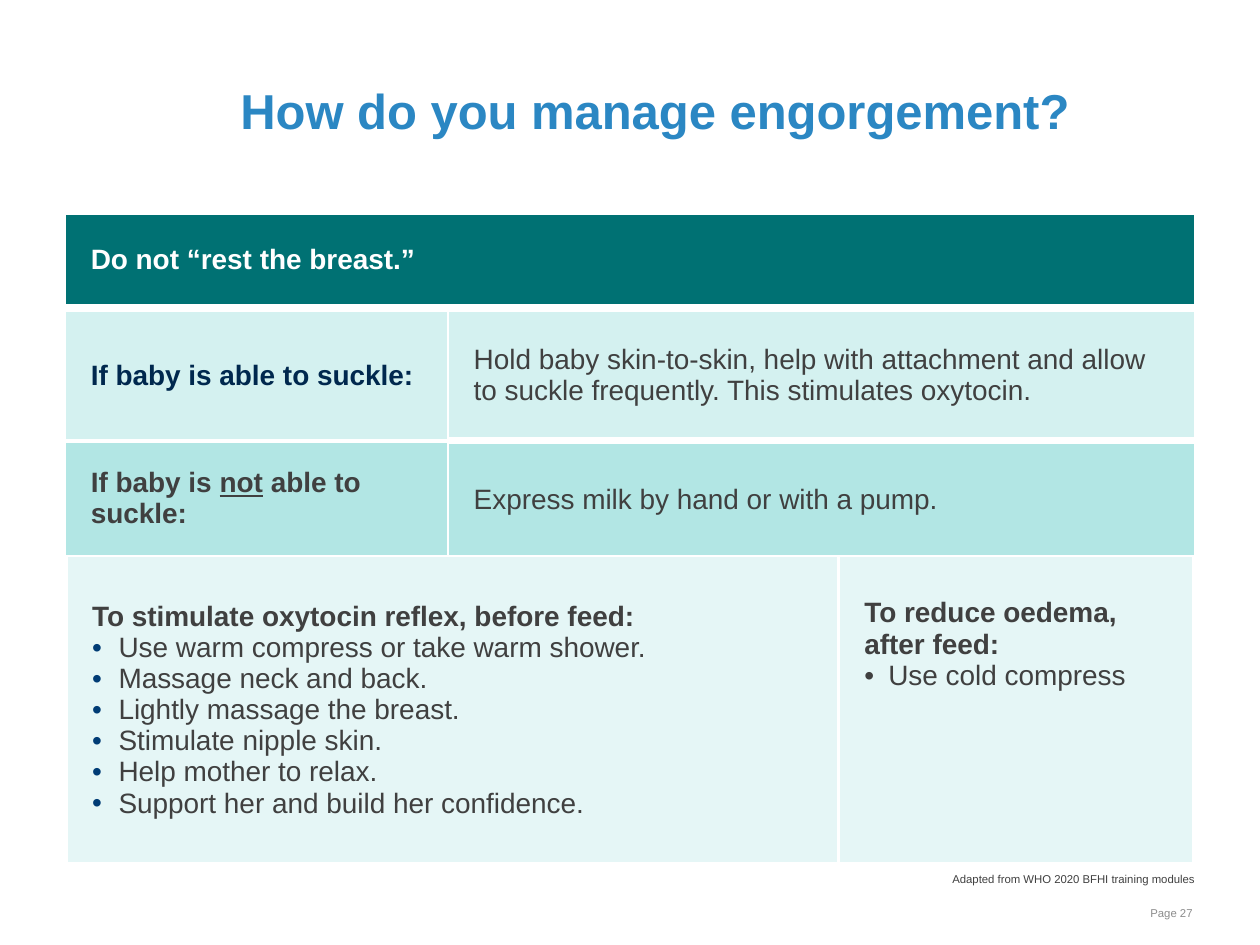
from lxml.etree import SubElement
from pptx import Presentation
from pptx.dml.color import RGBColor
from pptx.enum.text import MSO_ANCHOR as ANCHOR, PP_ALIGN as ALIGN
from pptx.oxml.ns import qn
from pptx.util import Pt

BLUE = RGBColor(0x2B, 0x87, 0xC3)
NAVY = RGBColor(0x00, 0x28, 0x4E)
BULLET_BLUE = RGBColor(0x00, 0x3C, 0x75)
DARK = RGBColor(0x40, 0x40, 0x40)
GREY = RGBColor(0x8C, 0x8C, 0x8C)
WHITE = RGBColor(0xFF, 0xFF, 0xFF)
TEAL = RGBColor(0x00, 0x71, 0x73)
MINT = RGBColor(0xB2, 0xE6, 0xE4)
PALE_MINT = RGBColor(0xD4, 0xF1, 0xF0)
AQUA = RGBColor(0x7F, 0xD5, 0xD2)

FONT = "Arial"
INSET = 14.4
LEFT, COL_2, RIGHT = 37.5, 256.3, 682.5
ADVICE_TOP, ADVICE_H = 317.6, 176.4


def add_text(p, text, size=16, color=DARK, bold=False, underline=False):
    """Add runs to a paragraph; a vertical tab stands for a line break."""
    for i, line in enumerate(text.split("\v")):
        if i:
            p.add_line_break()
        r = p.add_run()
        r.text = line
        f = r.font
        f.name, f.size, f.bold, f.underline = FONT, Pt(size), bold, underline
        f.color.rgb = color


def add_bullet(tf, text, indent, color=None):
    p = tf.add_paragraph()
    add_text(p, text)
    pPr = p._p.get_or_add_pPr()
    pPr.set("marL", str(Pt(indent)))
    pPr.set("indent", str(-Pt(indent)))
    if color is not None:
        bu = SubElement(pPr, qn("a:buClr"))
        SubElement(bu, qn("a:srgbClr"), val=str(color))
    SubElement(pPr, qn("a:buFont"), typeface=FONT)
    SubElement(pPr, qn("a:buChar"), char="•")


def add_label(s, text, x, y, w, h, anchor=ANCHOR.TOP, align=ALIGN.LEFT, **fmt):
    tf = s.shapes.add_textbox(Pt(x), Pt(y), Pt(w), Pt(h)).text_frame
    tf.word_wrap = True
    tf.vertical_anchor = anchor
    p = tf.paragraphs[0]
    p.alignment = align
    add_text(p, text, **fmt)


def add_borders(cell):
    tcPr = cell._tc.get_or_add_tcPr()
    for side, width in (("L", 1), ("R", 1), ("T", 1), ("B", 3)):
        ln = SubElement(tcPr, qn(f"a:ln{side}"), w=str(Pt(width)))
        fill = SubElement(ln, qn("a:solidFill"))
        SubElement(fill, qn("a:srgbClr"), val=str(WHITE))


def add_panel(s, x, y, w, h, color, alpha=None, inset=INSET):
    """Add a table of one cell and return the cell."""
    table = s.shapes.add_table(1, 1, Pt(x), Pt(y), Pt(w), Pt(h)).table
    table.first_row = table.horz_banding = False
    cell = table.cell(0, 0)
    add_borders(cell)
    cell.fill.solid()
    cell.fill.fore_color.rgb = color
    if alpha is not None:
        clr = cell._tc.tcPr.find(qn("a:solidFill")).find(qn("a:srgbClr"))
        SubElement(clr, qn("a:alpha"), val=str(alpha * 1000))
    cell.vertical_anchor = ANCHOR.MIDDLE
    cell.margin_left = Pt(INSET)
    cell.margin_top = cell.margin_right = cell.margin_bottom = Pt(inset)
    return cell


def first_paragraph(cell):
    return cell.text_frame.paragraphs[0]


def add_cases(s):
    case_w, action_w = 218.2, RIGHT - COL_2

    p = first_paragraph(add_panel(s, LEFT, 251.3, case_w, 66.3, MINT))
    add_text(p, "If baby is ", bold=True)
    add_text(p, "not", bold=True, underline=True)
    add_text(p, " able to suckle:", bold=True)

    cell = add_panel(s, LEFT, 177.8, case_w, 74.2, PALE_MINT)
    add_text(first_paragraph(cell), "If baby is able to suckle:",
             color=NAVY, bold=True)

    cell = add_panel(s, COL_2, 177.8, action_w, 73.5, PALE_MINT, inset=7.2)
    add_text(first_paragraph(cell),
             "Hold baby skin-to-skin, help with attachment and allow \v"
             "to suckle frequently. This stimulates oxytocin.")

    cell = add_panel(s, COL_2, 253.4, action_w, 64.8, MINT)
    add_text(first_paragraph(cell), "Express milk by hand or with a pump.")


def add_advice(s):
    cell = add_panel(s, 38.2, ADVICE_TOP, 440.6, ADVICE_H, AQUA, alpha=20)
    add_text(first_paragraph(cell),
             "To stimulate oxytocin reflex, before feed:", bold=True)
    for step in ("Use warm compress or take warm shower.",
                 "Massage neck and back.",
                 "Lightly massage the breast.",
                 "Stimulate nipple skin.",
                 "Help mother to relax.",
                 "Support her and build her confidence."):
        add_bullet(cell.text_frame, step, 15.1, BULLET_BLUE)

    cell = add_panel(s, 479.5, ADVICE_TOP, 202.3, ADVICE_H, AQUA, alpha=20)
    cell.vertical_anchor = ANCHOR.TOP
    cell.margin_top = Pt(24)
    add_text(first_paragraph(cell), "To reduce oedema, after feed:", bold=True)
    add_bullet(cell.text_frame, "Use cold compress", 13.7)


def main():
    prs = Presentation()
    prs.slide_width, prs.slide_height = Pt(720), Pt(540)
    s = prs.slides.add_slide(prs.slide_layouts[6])

    add_label(s, "Page 27 ", 516.2, 511.9, 174.2, 17.3, anchor=ANCHOR.BOTTOM,
              align=ALIGN.RIGHT, size=6.5, color=GREY)
    add_label(s, "How do you manage engorgement?", 130.3, 22.3, 547.2, 81.4,
              anchor=ANCHOR.MIDDLE, size=28, color=BLUE, bold=True)
    add_cases(s)
    add_advice(s)
    cell = add_panel(s, LEFT, 122.4, RIGHT - LEFT, 52.6, TEAL)
    add_text(first_paragraph(cell), "Do not “rest the breast.”",
             color=WHITE, bold=True)
    add_label(s, "Adapted from WHO 2020 BFHI training modules",
              537.1, 494.6, 176.4, 15.1, size=6.5)

    prs.save("out.pptx")


if __name__ == "__main__":
    main()
